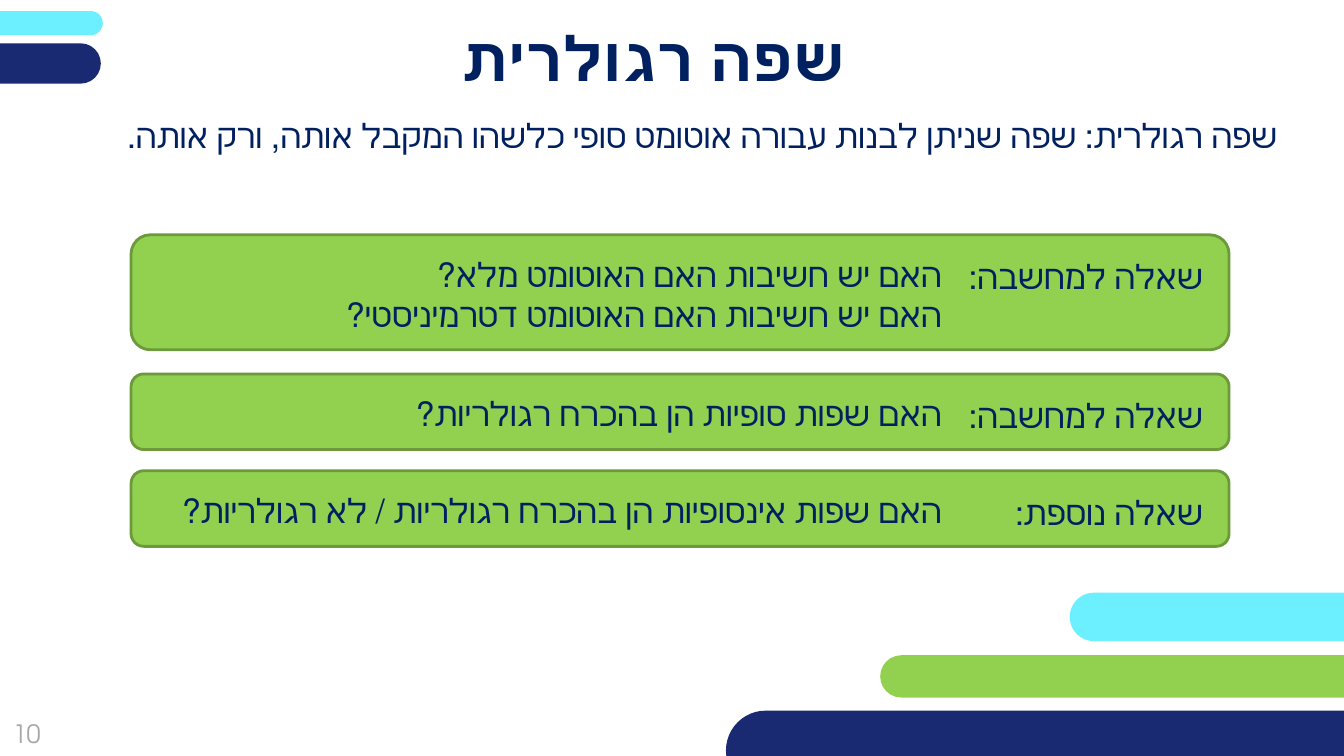
"""Build the Hebrew slide that defines a regular language and asks three questions."""
from lxml.etree import SubElement
from pptx import Presentation
from pptx.dml.color import RGBColor
from pptx.enum.shapes import MSO_SHAPE
from pptx.enum.text import MSO_ANCHOR, MSO_AUTO_SIZE, PP_ALIGN
from pptx.oxml.ns import qn
from pptx.util import Inches, Pt

FONT = "TeX Gyre Adventor"
COLORS = {
    "navy": "192A72",
    "cyan": "6CF0FF",
    "green": "92D050",
    "border": "6C9A3B",
    "text": "002060",
    "grey": "A6A6A6",
}

TITLE = "שפה רגולרית"
DEFINITION = "שפה רגולרית: שפה שניתן לבנות עבורה אוטומט סופי כלשהו המקבל אותה, ורק אותה."
PAGE_NUMBER = "10"

BARS = [
    ("navy", (7.2, 7.05, 6.55, 0.79)),
    ("cyan", (10.61, 5.88, 3.82, 0.48)),
    ("cyan", (-1.34, 0.11, 2.36, 0.24)),
    ("navy", (-2.25, 0.43, 3.25, 0.4)),
    ("green", (8.73, 6.5, 5.21, 0.42)),
]

QUESTIONS = [
    {
        "top": 2.33,
        "label": "שאלה למחשבה:",
        "label_width": 2.6,
        "lines": ["האם יש חשיבות האם האוטומט מלא?", "האם יש חשיבות האם האוטומט דטרמיניסטי?"],
    },
    {
        "top": 3.71,
        "label": "שאלה למחשבה:",
        "label_width": 2.6,
        "lines": ["האם שפות סופיות הן בהכרח רגולריות?"],
    },
    {
        "top": 4.67,
        "label": "שאלה נוספת:",
        "label_width": 2.13,
        "lines": ["האם שפות אינסופיות הן בהכרח רגולריות / לא רגולריות?"],
    },
]

CARD_LEFT, CARD_WIDTH = 1.3, 10.89
CARD_BASE_HEIGHT, EXTRA_LINE_HEIGHT = 0.75, 0.39
LINE_BOX_HEIGHT, TEXT_OFFSET, LABEL_OFFSET = 0.5, 0.14, 0.16
QUESTION_RIGHT, QUESTION_WIDTH = 9.44, 8.2
LABEL_RIGHT = 12.03


def color(name):
    return RGBColor.from_string(COLORS[name])


def place(shape, box):
    for side, value in zip(("left", "top", "width", "height"), box):
        setattr(shape, side, Inches(value))


def write(shape, lines, size=24, ink="text", align=PP_ALIGN.RIGHT, rtl=True,
          bold=False, space_after=0, **frame_format):
    frame = shape.text_frame
    frame.text = "\n".join(lines)
    settings = {"word_wrap": True, "auto_size": MSO_AUTO_SIZE.NONE, **frame_format}
    for name, value in settings.items():
        setattr(frame, name, value)
    paragraph_format = {
        "alignment": align, "space_before": Pt(0), "space_after": Pt(space_after),
    }
    for paragraph in frame.paragraphs:
        for name, value in paragraph_format.items():
            setattr(paragraph, name, value)
        properties = paragraph._p.get_or_add_pPr()
        for name, value in {"marL": 0, "marR": 0, "indent": 0, "rtl": int(rtl)}.items():
            properties.set(name, str(value))
        SubElement(properties, qn("a:buNone"))
        for run in paragraph.runs:
            font = run.font
            for name, value in {"size": Pt(size), "bold": bold, "name": FONT}.items():
                setattr(font, name, value)
            font.color.rgb = color(ink)


def add_rounded(slide, box, fill, border=None, rounding=None):
    shape = slide.shapes.add_shape(MSO_SHAPE.ROUNDED_RECTANGLE, *map(Inches, box))
    shape.shadow.inherit = False
    shape.fill.solid()
    shape.fill.fore_color.rgb = color(fill)
    if rounding is not None:
        shape.adjustments[0] = rounding
    if border:
        shape.line.color.rgb = color(border)
        shape.line.width = Pt(2)
    else:
        shape.line.fill.background()


def add_text(slide, box, lines, **text_format):
    write(slide.shapes.add_textbox(*map(Inches, box)), lines, **text_format)


def add_question(slide, top, label, label_width, lines):
    extra = (len(lines) - 1) * EXTRA_LINE_HEIGHT
    add_rounded(slide, (CARD_LEFT, top, CARD_WIDTH, CARD_BASE_HEIGHT + extra), "green", "border")
    question_box = (QUESTION_RIGHT - QUESTION_WIDTH, top + TEXT_OFFSET,
                    QUESTION_WIDTH, LINE_BOX_HEIGHT + extra)
    add_text(slide, question_box, lines, auto_size=MSO_AUTO_SIZE.SHAPE_TO_FIT_TEXT)
    label_box = (LABEL_RIGHT - label_width, top + LABEL_OFFSET, label_width, LINE_BOX_HEIGHT)
    add_text(slide, label_box, [label], word_wrap=False,
             auto_size=MSO_AUTO_SIZE.SHAPE_TO_FIT_TEXT)


def main():
    presentation = Presentation()
    presentation.slide_width, presentation.slide_height = Inches(13.33), Inches(7.5)
    slide = presentation.slides.add_slide(presentation.slide_layouts[1])
    title, body = slide.placeholders

    for fill, box in BARS:
        add_rounded(slide, box, fill, rounding=0.5)
    add_text(slide, (-0.18, 6.99, 0.89, 0.57), [PAGE_NUMBER], size=18, ink="grey",
             align=PP_ALIGN.CENTER, rtl=False, vertical_anchor=MSO_ANCHOR.MIDDLE)

    place(body, (0.56, 1.09, 12.21, 1.14))
    write(body, [DEFINITION], space_after=6, vertical_anchor=MSO_ANCHOR.TOP)
    place(title, (1.12, 0.17, 10.72, 0.79))
    write(title, [TITLE], size=44, bold=True, align=PP_ALIGN.CENTER,
          vertical_anchor=MSO_ANCHOR.MIDDLE,
          margin_left=0, margin_right=0, margin_top=0, margin_bottom=0)

    for question in QUESTIONS:
        add_question(slide, **question)
    presentation.save("out.pptx")


if __name__ == "__main__":
    main()
